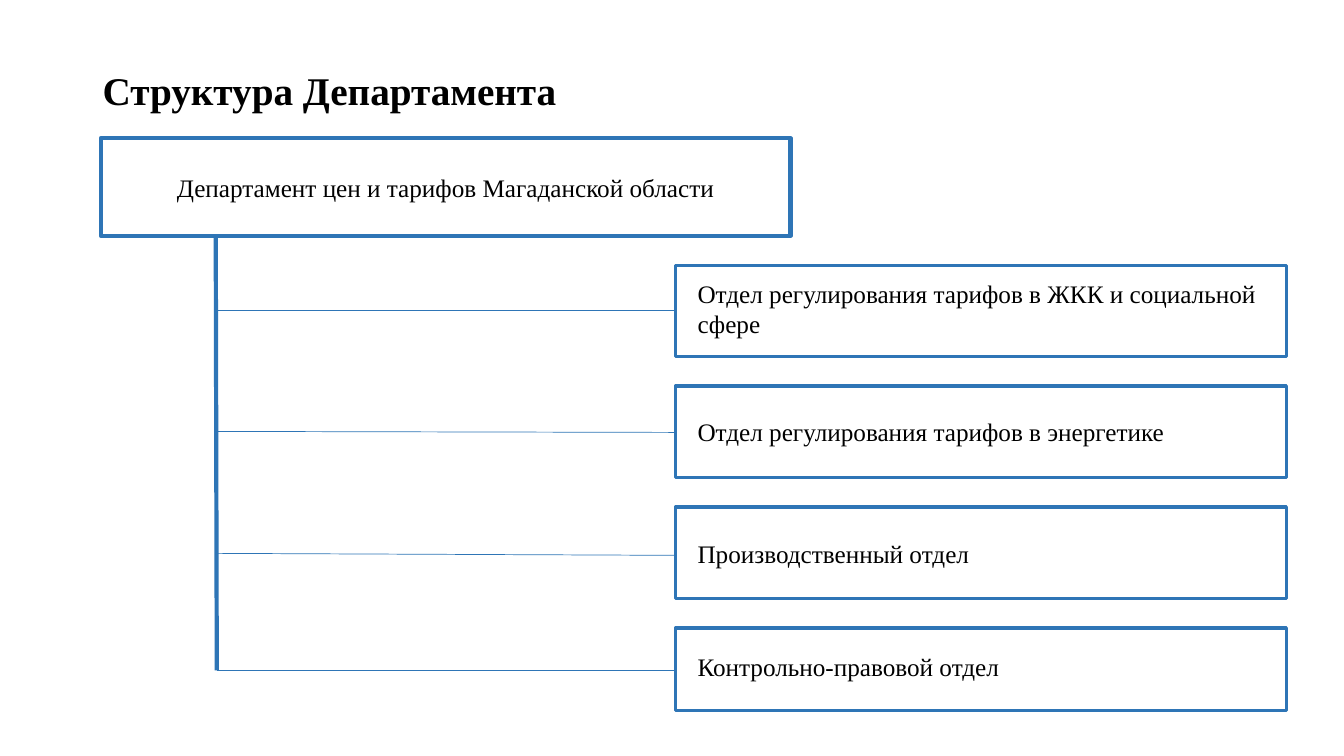
"""Build the department structure slide."""
import pptx
import pptx.dml.color
import pptx.enum.shapes
import pptx.enum.text
import pptx.oxml
import pptx.oxml.ns
import pptx.util

Inches = pptx.util.Inches
PP_ALIGN = pptx.enum.text.PP_ALIGN
ANCHOR = pptx.enum.text.MSO_ANCHOR

COLORS = {"blue": "2E75B6", "white": "FFFFFF", "black": "000000"}
FONT = "Times New Roman"
TITLE = "Структура Департамента"
HEAD = "Департамент цен и тарифов Магаданской области"
DIVISIONS = [
    {"name": "Отдел регулирования тарифов в ЖКК и социальной сфере",
     "height": 0.91, "text_top": 2.71, "text_height": 0.71,
     "branch": (2.14, 3.08, 6.7, 3.08)},
    {"name": "Отдел регулирования тарифов в энергетике",
     "height": 0.91, "text_top": 4.08, "text_height": 0.4,
     "branch": (2.15, 4.28, 6.7, 4.29)},
    {"name": "Производственный отдел",
     "height": 0.91, "text_top": 5.29, "text_height": 0.4,
     "branch": (2.15, 5.49, 6.82, 5.51)},
    {"name": "Контрольно-правовой отдел",
     "height": 0.82, "text_top": 6.41, "text_height": 0.4,
     "branch": (2.15, 6.65, 6.82, 6.65)},
]
TRUNK = (2.14, 2.33, 2.15, 6.65)
BOX_LEFT, BOX_TOP, BOX_WIDTH, BOX_STEP = 6.7, 2.63, 6.06, 1.2
TEXT_LEFT = 6.82


def color(name):
    return pptx.dml.color.RGBColor.from_string(COLORS[name])


def write(shape, text, size=18, bold=False, align=PP_ALIGN.LEFT,
          anchor=ANCHOR.TOP):
    frame = shape.text_frame
    frame.word_wrap = True
    frame.vertical_anchor = anchor
    paragraph = frame.paragraphs[0]
    paragraph.alignment = align
    run = paragraph.add_run()
    run.text = text
    run.font.name = FONT
    run.font.size = pptx.util.Pt(size)
    run.font.bold = bold
    run.font.color.rgb = color("black")
    return paragraph


def add_text(slide, place):
    return slide.shapes.add_textbox(*map(Inches, place))


def add_box(slide, place, line_width):
    box = slide.shapes.add_shape(
        pptx.enum.shapes.MSO_SHAPE.RECTANGLE, *map(Inches, place))
    box.shadow.inherit = False
    box.fill.solid()
    box.fill.fore_color.rgb = color("white")
    box.line.color.rgb = color("blue")
    box.line.width = pptx.util.Pt(line_width)
    return box


def add_line(slide, ends, line_width):
    line = slide.shapes.add_connector(
        pptx.enum.shapes.MSO_CONNECTOR.STRAIGHT, *map(Inches, ends))
    line.line.color.rgb = color("blue")
    line.line.width = pptx.util.Pt(line_width)
    properties = line._element.spPr
    properties.append(pptx.oxml.parse_xml(
        f'<a:effectLst {pptx.oxml.ns.nsdecls("a")}/>'))


def main():
    presentation = pptx.Presentation()
    presentation.slide_width = Inches(13.33)
    presentation.slide_height = Inches(7.5)
    slide = presentation.slides.add_slide(presentation.slide_layouts[6])

    title = add_text(slide, (0.92, 0.2, 11.5, 1.45))
    write(title, TITLE, 28, True, anchor=ANCHOR.MIDDLE).line_spacing = 0.9
    head = add_box(slide, (1, 1.37, 6.84, 0.97), 3)
    write(head, HEAD, align=PP_ALIGN.CENTER, anchor=ANCHOR.MIDDLE)

    add_line(slide, TRUNK, 3)
    for division in DIVISIONS:
        add_line(slide, division["branch"], 0.5)
    for index, division in enumerate(DIVISIONS):
        top = BOX_TOP + index * BOX_STEP
        add_box(slide, (BOX_LEFT, top, BOX_WIDTH, division["height"]), 2.25)
        label = add_text(slide, (TEXT_LEFT, division["text_top"],
                                 BOX_WIDTH, division["text_height"]))
        write(label, division["name"])
        label.text_frame.auto_size = (
            pptx.enum.text.MSO_AUTO_SIZE.SHAPE_TO_FIT_TEXT)

    presentation.save("out.pptx")


if __name__ == "__main__":
    main()
